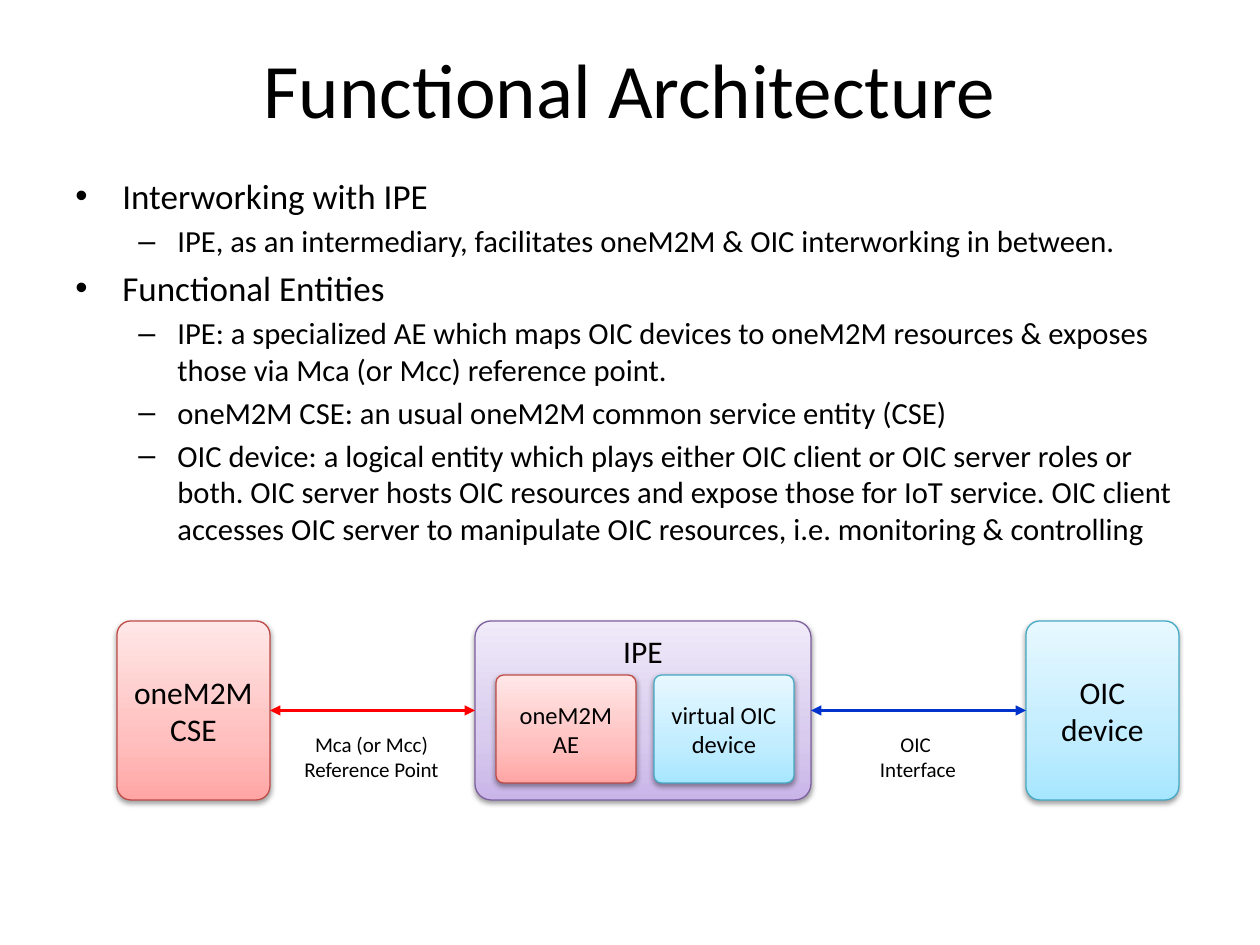
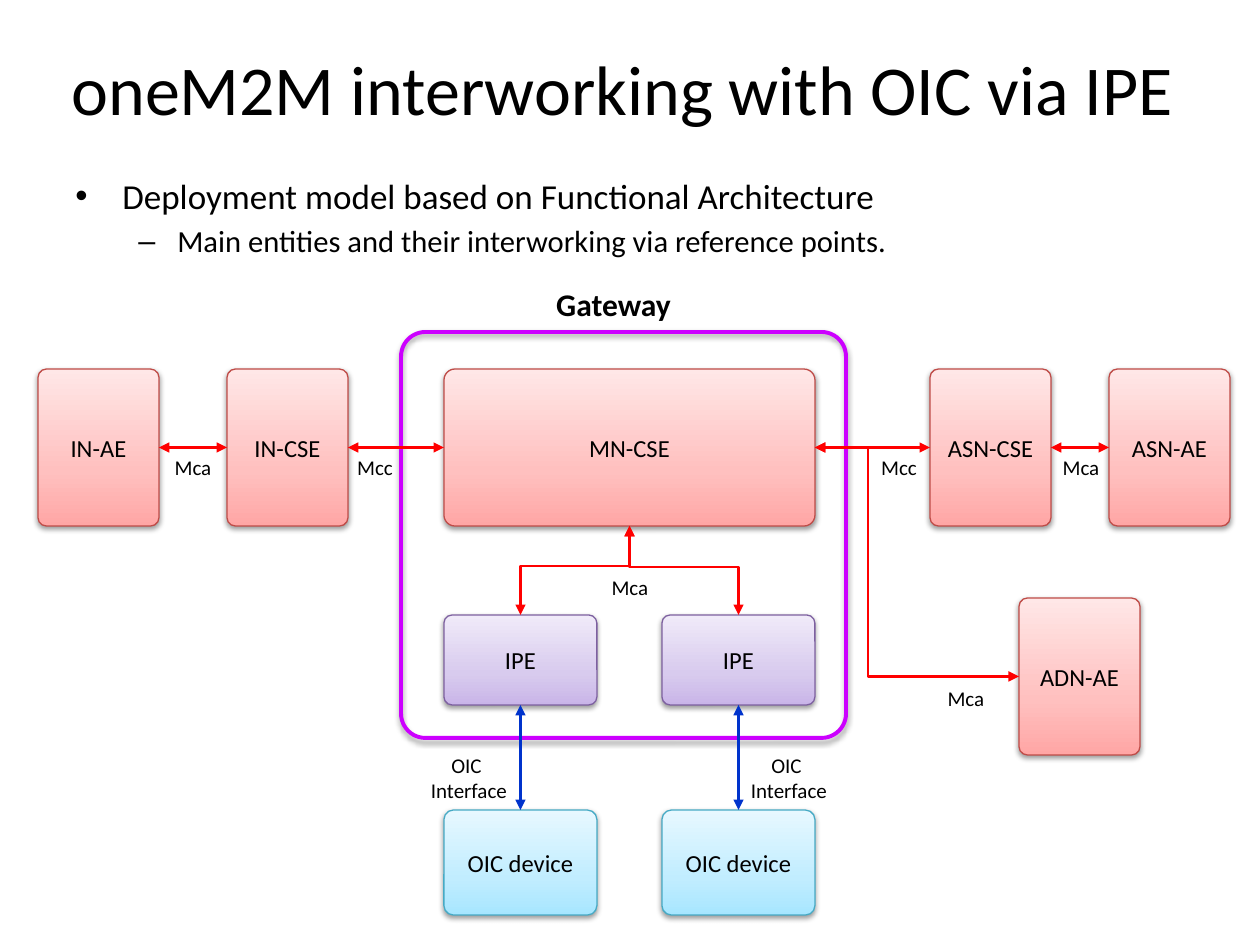
from collections import namedtuple
from dataclasses import dataclass

from lxml.etree import SubElement
from pptx import Presentation
from pptx.dml.color import RGBColor
from pptx.enum.shapes import MSO_CONNECTOR, MSO_SHAPE
from pptx.enum.text import MSO_ANCHOR, PP_ALIGN
from pptx.oxml.ns import qn
from pptx.util import Pt

TOP, LEFT, BOTTOM, RIGHT = range(4)
WIDE, HIGH = 1260, 945

Box = namedtuple("Box", "text kind x y w h size round")
Link = namedtuple("Link", "start side end face hue bend", defaults=[None])
Tag = namedtuple("Tag", "lines x y w h")


@dataclass(frozen=True)
class Theme:
    font = "Calibri"
    ink = "000000"
    head, sub = 20, 17.5
    big, mid, small = 18, 14, 12
    onem = "FF0000"
    oic = "0033CC"
    # kind: (outline, outline width, gradient colours from the bottom up)
    kinds = {
        "onem": ("BF4C48", 0.75, ("FFA6A5", "FFC0BF", "FFE7E7")),
        "oic": ("46AAC5", 0.75, ("A7E6FF", "C1EDFF", "E7F8FF")),
        "ipe": ("7D60A0", 0.75, ("C9B5E8", "D8CBEE", "F0EAF9")),
        "frame": ("CC00FF", 2.25, None),
    }
    stops = (0, 35, 100)
    soft, firm, wide = 0.07, 0.09, 0.06


T = Theme()

ENDS = 621, 153, 179    # top, width, height of the end boxes
INNER = 675, 140, 108   # top, width, height of the boxes inside the IPE
ROW, CELL, TALL = 369, 121, 157
COLS, UNIT = (444, 662), 153

ARCH = {
    "title": ("Functional Architecture", 44, 998),
    "body": (399, [
        (0, "Interworking with IPE"),
        (1, "IPE, as an intermediary, facilitates oneM2M & OIC interworking in between."),
        (0, "Functional Entities"),
        (1, "IPE: a specialized AE which maps OIC devices to oneM2M resources & exposes "
            "those via Mca (or Mcc) reference point."),
        (1, "oneM2M CSE: an usual oneM2M common service entity (CSE)"),
        (1, "OIC device: a logical entity which plays either OIC client or OIC server roles "
            "or both. OIC server hosts OIC resources and expose those for IoT service. "
            "OIC client accesses OIC server to manipulate OIC resources, i.e. monitoring "
            "& controlling"),
    ]),
    "boxes": {
        "device": Box("OIC device", "oic", 1026, *ENDS, T.big, T.firm),
        "cse": Box("oneM2M CSE", "onem", 117, *ENDS, T.big, T.firm),
        "ipe": Box("IPE", "ipe", 475, 621, 336, 179, T.big, T.firm),
        "ae": Box("oneM2M AE", "onem", 496, *INNER, T.mid, T.soft),
        "twin": Box("virtual OIC device", "oic", 654, *INNER, T.mid, T.soft),
    },
    "high": ["ipe"],
    "links": [
        Link("ipe", RIGHT, "device", LEFT, T.oic),
        Link("cse", RIGHT, "ipe", LEFT, T.onem),
    ],
    "tags": [
        Tag(["Mca (or Mcc) ", "Reference Point "], 291, 725, 166, 63),
        Tag(["OIC ", "Interface"], 867, 725, 102, 63),
    ],
}


def cell(text, x, y=ROW, w=CELL):
    return Box(text, "onem", x, y, w, TALL, T.mid, T.soft)


DEPLOY = {
    "title": ("oneM2M interworking with OIC via IPE ", 40, 1197),
    "body": (87, [
        (0, "Deployment model based on Functional Architecture"),
        (1, "Main entities and their interworking via reference points."),
    ]),
    "boxes": {
        "gate": Box("", "frame", 401, 332, 445, 406, T.mid, T.wide),
        "mn": cell("MN-CSE", COLS[0], w=COLS[1] + UNIT - COLS[0]),
        "in": cell("IN-CSE", 227),
        "in-ae": cell("IN-AE", 38),
        "asn": cell("ASN-CSE", 930),
        "asn-ae": cell("ASN-AE", 1109),
        "adn": cell("ADN-AE", 1019, 598),
        **{f"ipe{i}": Box("IPE", "ipe", x, 615, UNIT, 90, T.mid, T.firm)
           for i, x in enumerate(COLS)},
        **{f"dev{i}": Box("OIC device", "oic", x, 810, UNIT, 105, T.mid, T.firm)
           for i, x in enumerate(COLS)},
    },
    "high": [],
    "links": [
        Link("in-ae", RIGHT, "in", LEFT, T.onem),
        Link("in", RIGHT, "mn", LEFT, T.onem),
        Link("mn", RIGHT, "asn", LEFT, T.onem),
        Link("asn", RIGHT, "asn-ae", LEFT, T.onem),
        Link("mn", RIGHT, "adn", LEFT, T.onem, 0.26),
        Link("mn", BOTTOM, "ipe0", TOP, T.onem, 0.45),
        Link("mn", BOTTOM, "ipe1", TOP, T.onem, 0.46),
        *(Link(f"ipe{i}", BOTTOM, f"dev{i}", TOP, T.oic) for i in range(2)),
    ],
    "tags": [
        *(Tag(["OIC ", "Interface"], x, 746, 102, 63) for x in (418, 738)),
        *(Tag([text], x, y, 62, 38) for text, x, y in [
            ("Mca", 599, 568), ("Mcc", 344, 448), ("Mca", 162, 448),
            ("Mcc", 868, 448), ("Mca", 1050, 448), ("Mca", 935, 679)]),
    ],
    "label": ("Gateway", 536, 265, 155, 77),
}


def px(n):
    return round(n * 914400 / 126)


def area(*nums):
    return [px(n) for n in nums]


def rgb(code):
    return RGBColor.from_string(code)


def node(parent, tag, **attrs):
    return SubElement(parent, qn(tag), {k: str(v) for k, v in attrs.items()})


def write(para, text, size, bold=False, align=PP_ALIGN.CENTER):
    para.alignment = align
    run = para.add_run()
    run.text = text
    font = run.font
    font.name, font.size, font.bold = T.font, Pt(size), bold
    font.color.rgb = rgb(T.ink)


def frame(slide, place, anchor=MSO_ANCHOR.TOP, wrap=True):
    text = slide.shapes.add_textbox(*area(*place)).text_frame
    text.word_wrap, text.vertical_anchor = wrap, anchor
    return text


def add_title(slide, text, size, w):
    para = frame(slide, ((WIDE - w) / 2, 42, w, 105), MSO_ANCHOR.MIDDLE).paragraphs[0]
    para.line_spacing = 0.85
    write(para, text, size)


def add_body(slide, high, items):
    text = frame(slide, (63, 168, 1134, high))
    for i, (level, line) in enumerate(items):
        para = text.add_paragraph() if i else text.paragraphs[0]
        size = (T.head, T.sub)[level]
        para.level = level
        para.space_before = Pt(size * 0.2)
        write(para, line, size, align=PP_ALIGN.LEFT)
        margin, hang = ((47, 47), (102, 39))[level]
        props = para._p.get_or_add_pPr()
        props.set("marL", str(px(margin)))
        props.set("indent", str(-px(hang)))
        node(props, "a:buFont", typeface="Arial")
        node(props, "a:buChar", char="•–"[level])


def add_box(slide, box, high):
    shape = slide.shapes.add_shape(
        MSO_SHAPE.ROUNDED_RECTANGLE, *area(box.x, box.y, box.w, box.h))
    shape.adjustments[0] = box.round
    edge, width, shades = T.kinds[box.kind]
    props = shape._element.spPr
    if shades:
        shape.fill.gradient()
        shape.fill.gradient_angle = 90
        stops = props.find(".//" + qn("a:gsLst"))
        stops.clear()
        for pos, shade in zip(T.stops, shades):
            node(node(stops, "a:gs", pos=pos * 1000), "a:srgbClr", val=shade)
    else:
        shape.fill.background()
    shape.line.color.rgb, shape.line.width = rgb(edge), Pt(width)
    shape.shadow.inherit = False
    cast = node(props.find(qn("a:effectLst")), "a:outerShdw", blurRad=Pt(3.1),
                dist=Pt(1.6), dir=5400000, rotWithShape=0)
    node(node(cast, "a:srgbClr", val="000000"), "a:alpha", val=38000)
    text = shape.text_frame
    text.word_wrap = True
    text.vertical_anchor = MSO_ANCHOR.TOP if high else MSO_ANCHOR.MIDDLE
    if box.text:
        write(text.paragraphs[0], box.text, box.size)
    return shape


def port(box, side):
    """Middle of one side of a box, in px."""
    across, down = ((0.5, 0), (0, 0.5), (0.5, 1), (1, 0.5))[side]
    return box.x + box.w * across, box.y + box.h * down


def add_drop(slide, start, end):
    """Elbow that leaves and arrives vertically: a level elbow turned a quarter."""
    (x1, y1), (x2, y2) = start, end
    midx, midy = (x1 + x2) / 2, (y1 + y2) / 2
    turn = 1 if x2 < x1 else -1
    half, rise = turn * (y2 - y1) / 2, abs(x2 - x1) / 2
    line = slide.shapes.add_connector(
        MSO_CONNECTOR.ELBOW, *area(midx - half, midy - rise, midx + half, midy + rise))
    line._element.spPr.find(qn("a:xfrm")).set("rot", str(turn * 90 % 360 * 60000))
    return line


def add_link(slide, link, boxes, shapes):
    start, end = port(boxes[link.start], link.side), port(boxes[link.end], link.face)
    if link.bend and link.side == BOTTOM:
        line = add_drop(slide, start, end)
    else:
        kind = MSO_CONNECTOR.ELBOW if link.bend else MSO_CONNECTOR.STRAIGHT
        line = slide.shapes.add_connector(kind, *area(*start, *end))
        line.begin_connect(shapes[link.start], link.side)
        line.end_connect(shapes[link.end], link.face)
    line.line.color.rgb, line.line.width = rgb(link.hue), Pt(1.5)
    props = line._element.spPr
    for tip in ("a:headEnd", "a:tailEnd"):
        node(props.find(qn("a:ln")), tip, type="triangle")
    node(props, "a:effectLst")
    if link.bend:
        node(props.find(".//" + qn("a:avLst")), "a:gd", name="adj1",
             fmla=f"val {round(link.bend * 100000)}")


def add_tag(slide, tag):
    text = frame(slide, tag[1:], wrap=False)
    for i, line in enumerate(tag.lines):
        write(text.add_paragraph() if i else text.paragraphs[0], line, T.small)


def add_label(slide, text, *place):
    para = frame(slide, place, MSO_ANCHOR.MIDDLE).paragraphs[0]
    para.space_before = Pt(T.big * 0.2)
    write(para, text, T.big, bold=True)


def build(deck, page):
    slide = deck.slides.add_slide(deck.slide_layouts[6])
    add_title(slide, *page["title"])
    add_body(slide, *page["body"])
    boxes = page["boxes"]
    shapes = {key: add_box(slide, box, key in page["high"]) for key, box in boxes.items()}
    for link in page["links"]:
        add_link(slide, link, boxes, shapes)
    for tag in page["tags"]:
        add_tag(slide, tag)
    if "label" in page:
        add_label(slide, *page["label"])


def main():
    deck = Presentation()
    deck.slide_width, deck.slide_height = area(WIDE, HIGH)
    for page in (ARCH, DEPLOY):
        build(deck, page)
    deck.save("out.pptx")


if __name__ == "__main__":
    main()
